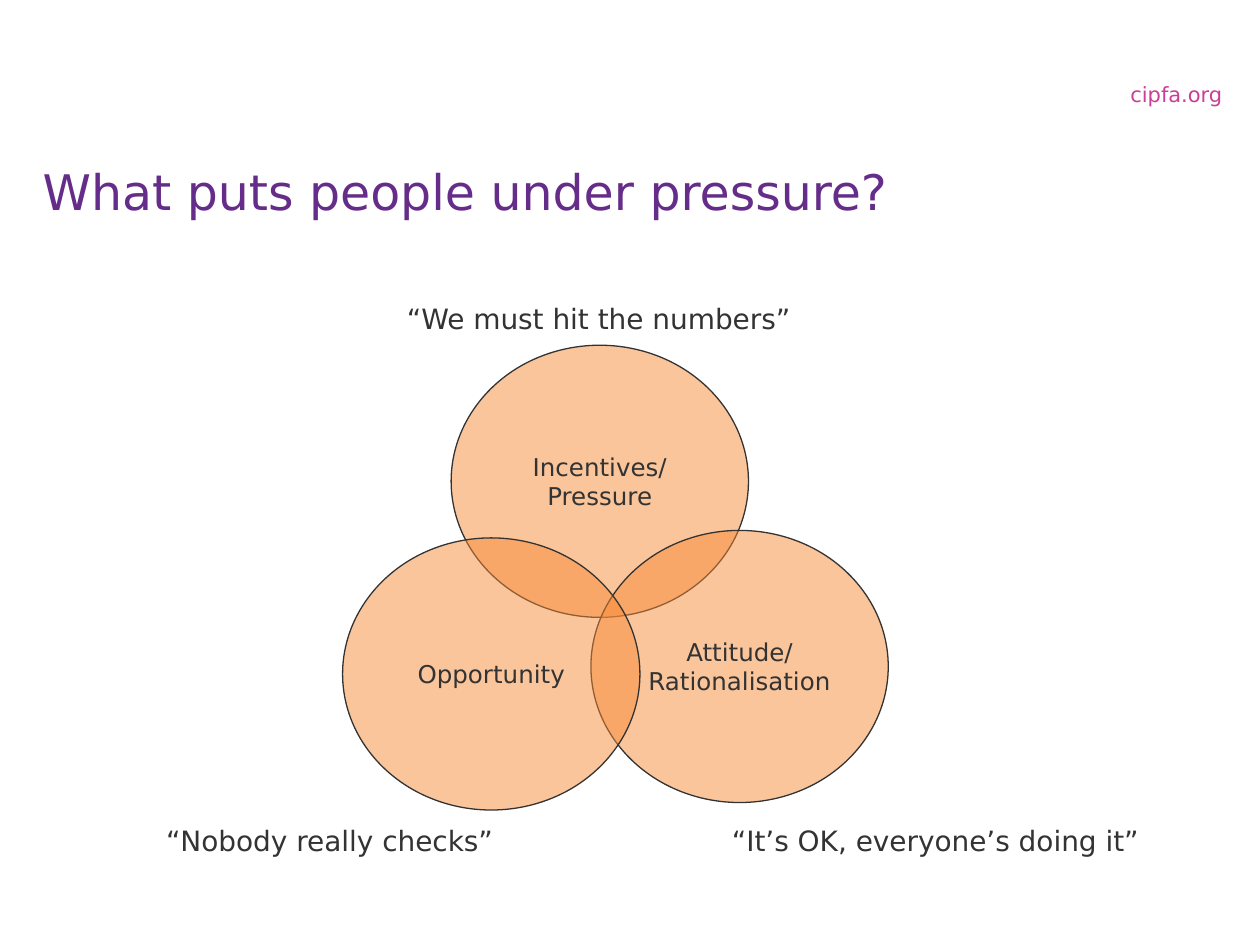
from copy import deepcopy

from pptx import Presentation
from pptx.dml.color import RGBColor
from pptx.enum.shapes import MSO_SHAPE
from pptx.enum.text import MSO_ANCHOR, PP_ALIGN
from pptx.oxml.ns import qn
from pptx.util import Pt
from lxml import etree

OVAL = MSO_SHAPE.OVAL
TOP, MIDDLE = MSO_ANCHOR.TOP, MSO_ANCHOR.MIDDLE
LEFT, CENTER, RIGHT = PP_ALIGN.LEFT, PP_ALIGN.CENTER, PP_ALIGN.RIGHT


def rgb(value):
    """Turn a hex string into a colour."""
    return RGBColor.from_string(value)


def write(tf, text, size, color, font, align=LEFT, anchor=TOP, wrap=True):
    """Put one formatted paragraph in a text frame; a \\v breaks the line."""
    tf.word_wrap = wrap
    tf.vertical_anchor = anchor
    p = tf.paragraphs[0]
    p.text = text
    p.alignment = align
    for r in p.runs:
        r.font.size = Pt(size)
        r.font.name = font
        r.font.color.rgb = rgb(color)
    for br in p._p.findall(qn("a:br")):
        br.insert(0, deepcopy(p.runs[0]._r.rPr))


class Deck:
    """Hold the style and the current slide."""

    font = "DejaVu Sans"
    ink, purple, pink, orange = "333333", "652D89", "CA3E96", "F68933"
    opacity = 49
    circle_size = 169.9, 155.5

    def __init__(self, width, height):
        """Start a presentation with one blank slide."""
        self.prs = Presentation()
        self.prs.slide_width, self.prs.slide_height = Pt(width), Pt(height)
        self.s = self.prs.slides.add_slide(self.prs.slide_layouts[6])

    def text(self, text, x, y, w, h, size=16, color=ink, align=LEFT):
        """Add a text box."""
        sp = self.s.shapes.add_textbox(Pt(x), Pt(y), Pt(w), Pt(h))
        write(sp.text_frame, text, size, color, self.font, align)

    def circle(self, text, x, y):
        """Add a translucent labelled circle of the diagram."""
        w, h = self.circle_size
        sp = self.s.shapes.add_shape(OVAL, Pt(x), Pt(y), Pt(w), Pt(h))
        sp.shadow.inherit = False
        sp.fill.solid()
        sp.fill.fore_color.rgb = rgb(self.orange)
        clr = sp._element.spPr.find(qn("a:solidFill"))[0]
        etree.SubElement(clr, qn("a:alpha"), val=str(self.opacity * 1000))
        sp.line.color.rgb = rgb(self.ink)
        sp.line.width = Pt(0.75)
        write(sp.text_frame, text, 14, self.ink, self.font, CENTER, MIDDLE, wrap=False)


def main():
    """Build the slide and save it."""
    deck = Deck(720, 540)
    deck.text("cipfa.org", 478.8, 43.2, 226.8, 21.6, 12, deck.pink, RIGHT)
    deck.text("What puts people under pressure?", 17.3, 88.6, 677.5, 67.7, 28, deck.purple)
    for label, x, y in (
        ("Incentives/\vPressure", 257.8, 197.3),
        ("Attitude/\vRationalisation", 337.7, 303.1),
        ("Opportunity", 195.8, 307.4),
    ):
        deck.circle(label, x, y)
    for quote, x, y, w in (
        ("“We must hit the numbers”", 225.4, 168.5, 238.3),
        ("“Nobody really checks”", 87.8, 467.3, 238.3),
        ("“It’s OK, everyone’s doing it”", 411.1, 467.3, 260.6),
    ):
        deck.text(quote, x, y, w, 39.6)
    deck.prs.save("out.pptx")


if __name__ == "__main__":
    main()
